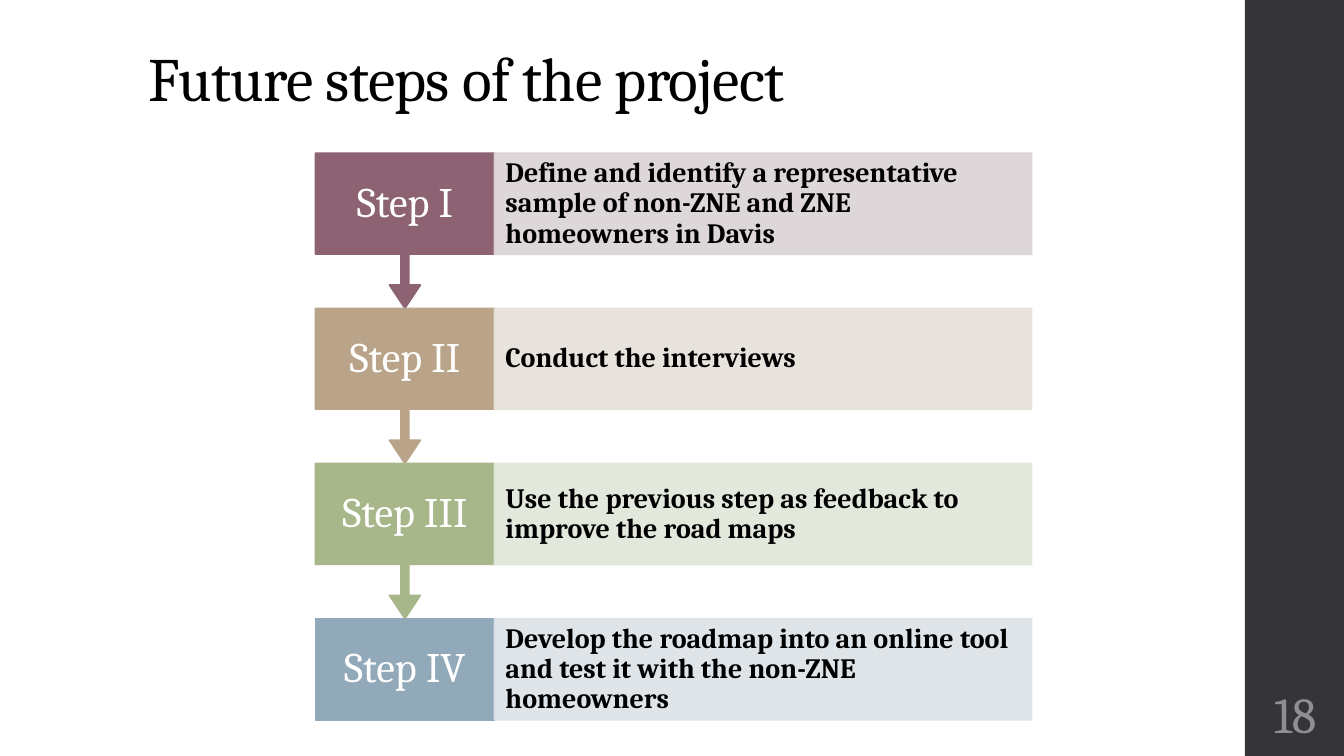
from lxml.etree import SubElement
from pptx import Presentation
from pptx.dml.color import RGBColor
from pptx.enum.shapes import MSO_SHAPE as SHAPE
from pptx.enum.text import MSO_ANCHOR as ANCHOR, PP_ALIGN as ALIGN
from pptx.oxml.ns import qn
from pptx.util import Cm, Pt

FONT = "Cambria"
STEP_LEFT, STEP_TOP = 7.95, 3.86
STEP_W, STEP_H, STEP_PITCH = 4.51, 2.55, 3.91
DETAIL_W = 13.54
ARROW_ADJUSTMENTS = (0.05, 0.1, 0.15, 0.65)

# Label, description, strong colour, pale colour
STEPS = [
    ("Step I", "Define and identify a representative sample of non-ZNE and ZNE "
     "homeowners in Davis", "8D6374", "DBD3D6"),
    ("Step II", "Conduct the interviews", "B9A489", "E6E0DA"),
    ("Step III", "Use the previous step as feedback to improve the road maps",
     "A7B789", "E1E6DA"),
    ("Step IV", "Develop the roadmap into an online tool and test it with the "
     "non-ZNE homeowners", "92A9B9", "DCE2E6"),
]


def rgb(value):
    return RGBColor.from_string(value)


def set_attrs(obj, values):
    for name, value in values.items():
        setattr(obj, name, value)


def set_alpha(fill, percent):
    """Make a solid fill partly transparent."""
    color = fill._xPr.find(qn("a:solidFill"))[0]
    SubElement(color, qn("a:alpha")).set("val", str(percent * 1000))


def write(sp, text, size, color, align=ALIGN.LEFT, anchor=ANCHOR.MIDDLE,
          inset=0.25, bold=False, line_spacing=0.9):
    """Put one formatted paragraph into a shape or text box."""
    tf = sp.text_frame
    set_attrs(tf, {"word_wrap": True, "vertical_anchor": anchor,
                   "margin_left": Cm(inset), "margin_right": Cm(inset),
                   "margin_top": Cm(0), "margin_bottom": Cm(0)})
    p = tf.paragraphs[0]
    set_attrs(p, {"alignment": align, "line_spacing": line_spacing})
    r = p.add_run()
    r.text = text
    set_attrs(r.font, {"name": FONT, "size": Pt(size), "bold": bold})
    r.font.color.rgb = rgb(color)
    return r


def add_block(s, kind, box, color, alpha=None, outlined=True):
    """Add a flat shape whose outline matches its fill."""
    sp = s.shapes.add_shape(kind, *map(Cm, box))
    sp.shadow.inherit = False
    fills = [sp.fill]
    if outlined:
        sp.line.width = Pt(1.1)
        fills.append(sp.line.fill)
    else:
        sp.line.fill.background()
    for fill in fills:
        fill.solid()
        fill.fore_color.rgb = rgb(color)
        if alpha is not None:
            set_alpha(fill, alpha)
    return sp


def add_label(s, box, text, size, color, **layout):
    return write(s.shapes.add_textbox(*map(Cm, box)), text, size, color, **layout)


def add_step(s, top, label, detail, strong, pale, is_last):
    """Add one step: a label block, with an arrow unless last, and its detail."""
    kind = SHAPE.RECTANGLE if is_last else SHAPE.DOWN_ARROW_CALLOUT
    height = STEP_H if is_last else STEP_PITCH
    sp = add_block(s, kind, (STEP_LEFT, top, STEP_W, height), strong)
    if not is_last:
        for i, value in enumerate(ARROW_ADJUSTMENTS):
            sp.adjustments[i] = value
    write(sp, label, 30, "FFFFFF", align=ALIGN.CENTER)

    box = (STEP_LEFT + STEP_W, top, DETAIL_W, STEP_H)
    sp = add_block(s, SHAPE.RECTANGLE, box, pale, alpha=90)
    write(sp, detail, 20, "000000", inset=0.28, bold=True)


def main():
    prs = Presentation()
    set_attrs(prs, {"slide_width": Cm(33.87), "slide_height": Cm(19.05)})
    s = prs.slides.add_slide(prs.slide_layouts[6])

    # Side band with the slide number
    add_block(s, SHAPE.RECTANGLE, (31.37, 0, 2.5, 19.05), "353537", outlined=False)
    add_label(s, (31.37, 17.15, 2.54, 1.65), "18", 36, "8E8E94",
              align=ALIGN.CENTER, inset=0.13, line_spacing=1.0)

    # Title, slightly tightened
    r = add_label(s, (3.5, 1.02, 26.92, 2.08), "Future steps of the project",
                  44, "000000")
    r.font._element.set("spc", "-50")

    # Chain of steps
    for i, step in enumerate(STEPS):
        add_step(s, STEP_TOP + i * STEP_PITCH, *step, is_last=i == len(STEPS) - 1)

    prs.save("out.pptx")


if __name__ == "__main__":
    main()
